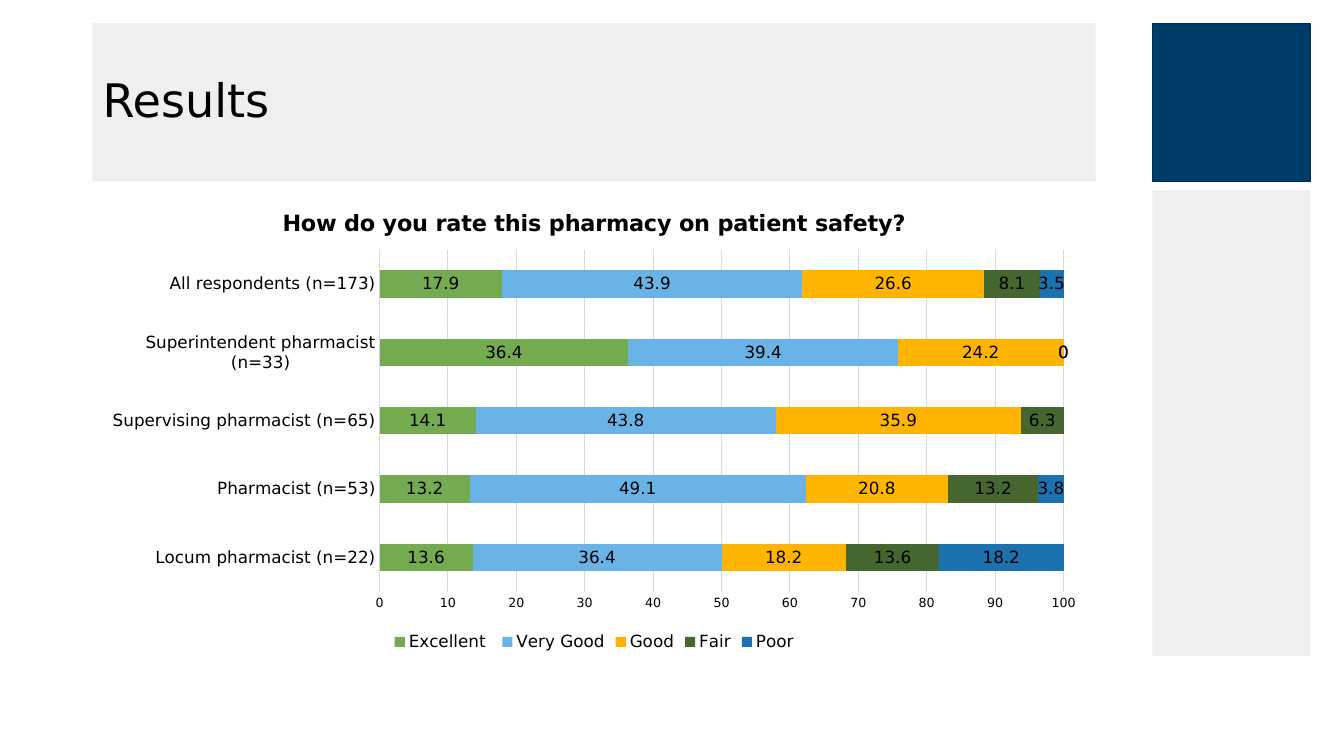
from lxml.etree import SubElement
from pptx import Presentation
from pptx.chart.data import CategoryChartData
from pptx.dml.color import RGBColor
from pptx.enum.chart import XL_CHART_TYPE, XL_LABEL_POSITION, XL_LEGEND_POSITION, XL_TICK_MARK
from pptx.enum.shapes import MSO_SHAPE
from pptx.enum.text import MSO_ANCHOR, PP_ALIGN
from pptx.oxml.ns import qn
from pptx.util import Pt

FONT = "DejaVu Sans"
BLACK, PALE, NAVY, NAVY_EDGE, GRID = "000000", "EFEFF0", "003C69", "002C4E", "D9D9D9"

# Shared frame: a wide left column, a narrow right column, two rows
LEFT, SIDE_LEFT = 66.24, 823.1
TOP, BODY_TOP = 16.6, 135.9
WIDE, BAND, BODY_HEIGHT = 716.4, 113, 332.6

GROUPS = ["Locum pharmacist (n=22)", "Pharmacist (n=53)", "Supervising pharmacist (n=65)",
          "Superintendent pharmacist (n=33)", "All respondents (n=173)"]
RATINGS = [
    ("Excellent ", "74AA50", [13.6, 13.2, 14.1, 36.4, 17.9]),
    ("Very Good", "69B3E7", [36.4, 49.1, 43.8, 39.4, 43.9]),
    ("Good", "FFB500", [18.2, 20.8, 35.9, 24.2, 26.6]),
    ("Fair", "466630", [13.6, 13.2, 6.3, 0, 8.1]),
    ("Poor", "1C72AE", [18.2, 3.8, 0, 0, 3.5]),
]


def color(value):
    return RGBColor.from_string(value)


def style_font(font, size, bold=False):
    font.name = FONT
    font.size = Pt(size)
    font.bold = bold
    font.color.rgb = color(BLACK)


def add_panel(page, left, top, width, height, fill, edge=None):
    panel = page.shapes.add_shape(MSO_SHAPE.RECTANGLE, Pt(left), Pt(top), Pt(width), Pt(height))
    panel.shadow.inherit = False
    panel.fill.solid()
    panel.fill.fore_color.rgb = color(fill)
    if edge:
        panel.line.color.rgb = color(edge)
        panel.line.width = Pt(1)
    else:
        panel.line.fill.background()
    return panel


def add_heading(page, left, top, width, height, text):
    box = add_panel(page, left, top, width, height, PALE)
    frame = box.text_frame
    frame.word_wrap = True
    frame.vertical_anchor = MSO_ANCHOR.MIDDLE
    para = frame.paragraphs[0]
    para.alignment = PP_ALIGN.LEFT
    para.line_spacing = 0.9
    span = para.add_run()
    span.text = text
    style_font(span.font, 33)


def add_sidebar(page, left, top, width, body_top, body_height):
    add_panel(page, left, body_top, width, body_height, PALE)
    add_panel(page, left, top, width, width, NAVY, NAVY_EDGE)


def place_plot(chart, x, y, w, h):
    """Fix the inner plot area, in fractions of the chart frame."""
    area = chart.plots[0]._element.getparent()
    for old in area.findall(qn("c:layout")):
        area.remove(old)
    layout = SubElement(area, qn("c:layout"))
    area.insert(0, layout)
    manual = SubElement(layout, qn("c:manualLayout"))
    settings = [("layoutTarget", "inner"), ("xMode", "edge"), ("yMode", "edge"),
                ("x", x), ("y", y), ("w", w), ("h", h)]
    for name, value in settings:
        SubElement(manual, qn(f"c:{name}")).set("val", str(value))


def add_rating_chart(page, left, top, width, height, title):
    data = CategoryChartData()
    data.categories = GROUPS
    for name, _, values in RATINGS:
        data.add_series(name, values)
    chart = page.shapes.add_chart(XL_CHART_TYPE.BAR_STACKED, Pt(left), Pt(top),
                                  Pt(width), Pt(height), data).chart
    style_font(chart.font, 10)

    # Title and legend
    chart.has_title = True
    span = chart.chart_title.text_frame.paragraphs[0].add_run()
    span.text = title
    style_font(span.font, 16, bold=True)
    chart.chart_title.include_in_layout = False
    chart.has_legend = True
    chart.legend.position = XL_LEGEND_POSITION.BOTTOM
    chart.legend.include_in_layout = False
    style_font(chart.legend.font, 12)

    # Axes
    groups, scale = chart.category_axis, chart.value_axis
    for axis, size in ((groups, 12), (scale, 9)):
        axis.major_tick_mark = axis.minor_tick_mark = XL_TICK_MARK.NONE
        style_font(axis.tick_labels.font, size)
    scale.minimum_scale, scale.maximum_scale, scale.major_unit = 0, 100, 10
    scale.has_major_gridlines = True
    scale.format.line.fill.background()
    for line in (groups.format.line, scale.major_gridlines.format.line):
        line.color.rgb = color(GRID)
        line.width = Pt(0.75)

    # Bars and their values
    plot = chart.plots[0]
    plot.gap_width, plot.overlap = 150, 100
    plot.vary_by_categories = False
    for series, (_, fill, _) in zip(plot.series, RATINGS):
        series.format.fill.solid()
        series.format.fill.fore_color.rgb = color(fill)
        labels = series.data_labels
        labels.show_value = True
        labels.position = XL_LABEL_POSITION.CENTER
        style_font(labels.font, 12)
    place_plot(chart, 0.286, 0.128, 0.682, 0.734)


def add_results_slide(deck):
    page = deck.slides.add_slide(deck.slide_layouts[6])
    add_sidebar(page, SIDE_LEFT, TOP, BAND, BODY_TOP, BODY_HEIGHT)
    add_heading(page, LEFT, TOP, WIDE, BAND, "Results")
    add_rating_chart(page, LEFT, BODY_TOP, WIDE, BODY_HEIGHT,
                     "How do you rate this pharmacy on patient safety?")


def main():
    deck = Presentation()
    deck.slide_width, deck.slide_height = Pt(960), Pt(540)
    add_results_slide(deck)
    deck.save("out.pptx")


if __name__ == "__main__":
    main()
